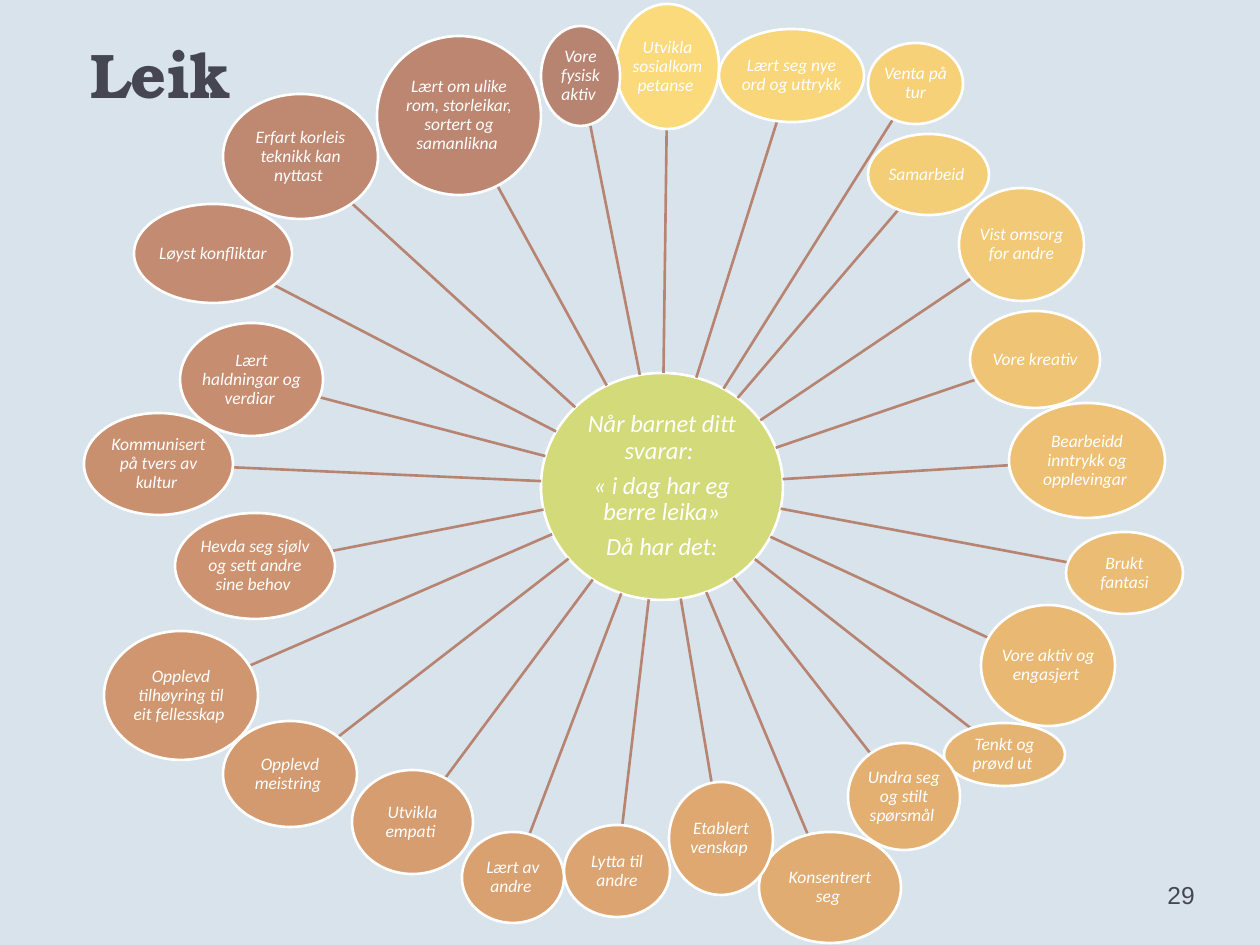
from math import hypot

from lxml.etree import SubElement
from pptx import Presentation
from pptx.dml.color import RGBColor
from pptx.enum.shapes import MSO_CONNECTOR, MSO_SHAPE
from pptx.enum.text import MSO_ANCHOR as Anchor, PP_ALIGN as Align
from pptx.oxml.ns import qn
from pptx.util import Emu, Pt

PX = 914400 / 126
WHITE, INK, SPOKE = "FFFFFF", "464653", "B88472"

HUB = (541, 373, 242, 227)
HUB_FILL = "D2DA7A"
HUB_LINES = ["Når barnet ditt svarar: ", "« i dag har eg berre leika»", "Då har det:"]

BUBBLES = [
    ("Utvikla sosialkompetanse ", (616, 4, 103, 125), "FADA7A"),
    ("Lært seg nye ord og uttrykk ", (719, 29, 145, 93), "F8D679"),
    ("Venta på tur", (868, 43, 95, 81), "F6D178"),
    ("Samarbeid ", (868, 134, 121, 81), "F4CD77"),
    ("Vist omsorg for andre", (959, 188, 125, 113), "F2C976"),
    ("Vore kreativ", (970, 311, 130, 97), "F0C475"),
    ("Bearbeidd inntrykk og opplevingar ", (1009, 403, 156, 115), "EEC074"),
    ("Brukt fantasi", (1066, 532, 117, 82), "EBBC73"),
    ("Vore aktiv og engasjert ", (981, 605, 134, 121), "E9B872"),
    ("Tenkt og prøvd ut ", (944, 723, 121, 63), "E6B472"),
    ("Undra seg og stilt spørsmål ", (848, 743, 112, 107), "E4B071"),
    ("Konsentrert seg ", (759, 832, 142, 111), "E1AC71"),
    ("Etablert venskap ", (669, 782, 104, 113), "DFA870"),
    ("Lytta til andre", (564, 825, 106, 92), "DCA470"),
    ("Lært av andre ", (462, 832, 102, 91), "D9A070"),
    ("Utvikla empati ", (352, 770, 121, 104), "D69D70"),
    ("Opplevd meistring ", (223, 721, 134, 106), "D39A70"),
    ("Opplevd tilhøyring til eit fellesskap ", (104, 631, 154, 129), "D09670"),
    ("Hevda seg sjølv og sett andre sine behov ", (175, 513, 160, 106), "CD9370"),
    ("Kommunisert på tvers av kultur ", (84, 413, 149, 102), "C99070"),
    ("Lært haldningar og verdiar ", (180, 323, 143, 113), "C68D70"),
    ("Løyst konfliktar ", (134, 204, 158, 99), "C38B71"),
    ("Erfart korleis teknikk kan nyttast ", (223, 94, 155, 125), "BF8871"),
    ("Lært om ulike rom, storleikar, sortert og samanlikna ", (377, 36, 164, 159), "BC8671"),
    ("Vore fysisk aktiv ", (541, 26, 79, 100), "B88472"),
]


def px(value):
    """Turn px into EMU."""
    return Emu(round(value * PX))


def paint(target, color):
    """Give a fill one solid colour."""
    target.solid()
    target.fore_color.rgb = RGBColor.from_string(color)


def add_span(para, text, font, size, color, bold=False, italic=False):
    """Add one styled run to a paragraph."""
    span = para.add_run()
    span.text = text
    span.font.name = font
    span.font.size = Pt(size)
    span.font.bold = bold
    span.font.italic = italic
    span.font.color.rgb = RGBColor.from_string(color)


def add_label(page, area, text, font, size, align, anchor, bold=False, bottom=6):
    """Add a one-line text box."""
    box = page.shapes.add_textbox(*map(px, area))
    frame = box.text_frame
    frame.word_wrap = True
    frame.vertical_anchor = anchor
    frame.margin_bottom = px(bottom)
    para = frame.paragraphs[0]
    para.alignment = align
    add_span(para, text, font, size, INK, bold=bold)


def add_bubble(page, area, color, lines, size):
    """Add a white-edged ellipse with centred italic lines."""
    bubble = page.shapes.add_shape(MSO_SHAPE.OVAL, *map(px, area))
    bubble.shadow.inherit = False
    paint(bubble.fill, color)
    paint(bubble.line.fill, WHITE)
    bubble.line.width = Pt(1.5)
    frame = bubble.text_frame
    frame.word_wrap = True
    frame.vertical_anchor = Anchor.MIDDLE
    frame.margin_left = frame.margin_right = px(1)
    frame.margin_top = frame.margin_bottom = px(1)
    for index, line in enumerate(lines):
        para = frame.add_paragraph() if index else frame.paragraphs[0]
        para.alignment = Align.CENTER
        para.line_spacing = 0.9
        para.space_after = Pt(size * 0.35)
        add_span(para, line, "Calibri", size, WHITE, italic=True)


def center(area):
    """Return the middle point of an area."""
    left, top, width, height = area
    return left + width / 2, top + height / 2


def rim_point(area, target):
    """Return where the ray from an ellipse's centre to a target leaves it."""
    x, y = center(area)
    dx, dy = target[0] - x, target[1] - y
    reach = hypot(dx / (area[2] / 2), dy / (area[3] / 2))
    return x + dx / reach, y + dy / reach


def add_spoke(page, area):
    """Add a line from the hub's rim to a bubble's rim."""
    start = rim_point(HUB, center(area))
    end = rim_point(area, center(HUB))
    spoke = page.shapes.add_connector(MSO_CONNECTOR.STRAIGHT, *map(px, start + end))
    paint(spoke.line.fill, SPOKE)
    spoke.line.width = Pt(1.5)
    SubElement(spoke.element.spPr, qn("a:effectLst"))


def main():
    """Build the slide and save it."""
    deck = Presentation()
    deck.slide_width, deck.slide_height = px(1260), px(945)
    page = deck.slides.add_slide(deck.slide_layouts[6])
    paint(page.background.fill, "D9E3EB")
    add_label(page, (15, 39, 292, 108), "Leik", "TeX Gyre Bonum", 36,
              Align.CENTER, Anchor.BOTTOM, bold=True, bottom=36)
    add_bubble(page, HUB, HUB_FILL, HUB_LINES, 14)
    for text, area, color in BUBBLES:
        add_spoke(page, area)
        add_bubble(page, area, color, [text], 10)
    add_label(page, (1155, 874, 79, 50), "29", "Arial", 14, Align.LEFT, Anchor.TOP)
    deck.save("out.pptx")


if __name__ == "__main__":
    main()
